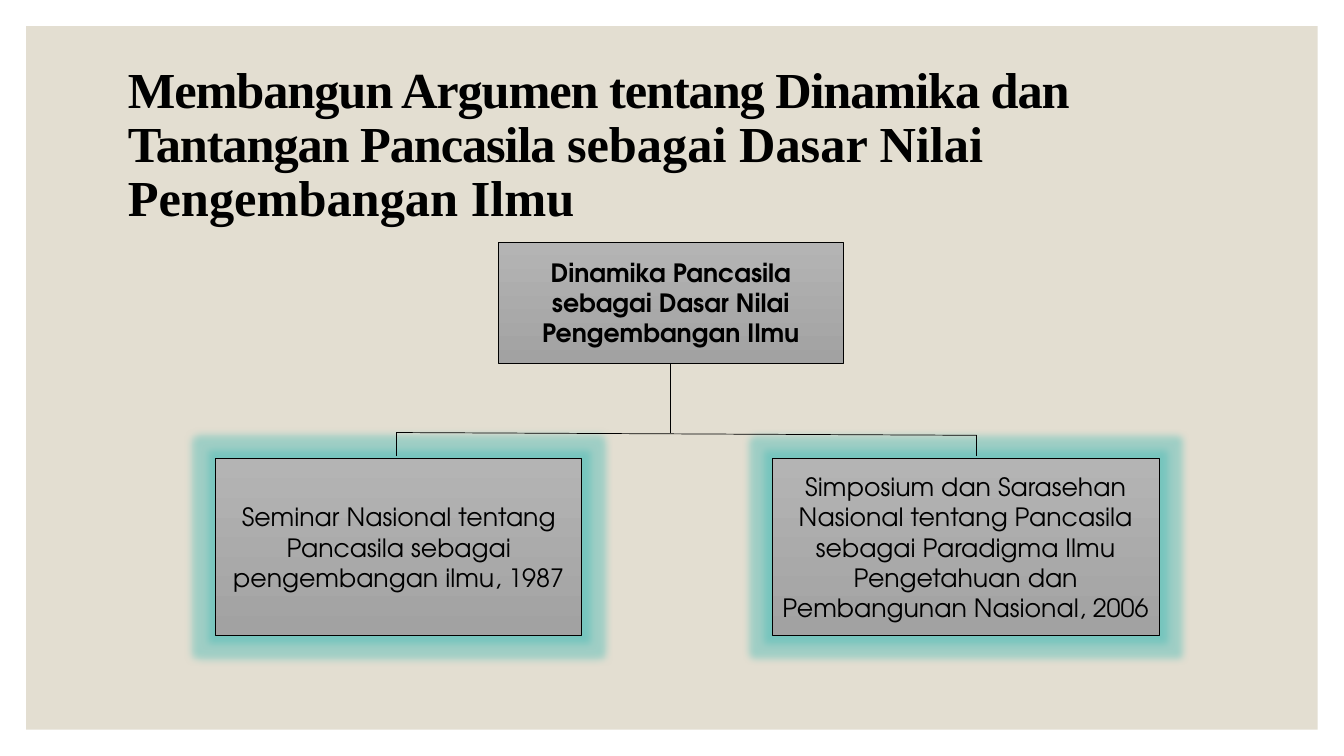
from dataclasses import dataclass

from lxml import etree
from pptx import Presentation
from pptx.dml.color import RGBColor
from pptx.enum.shapes import MSO_CONNECTOR as Connector, MSO_SHAPE as Shape
from pptx.enum.text import MSO_ANCHOR as Anchor, PP_ALIGN as Align
from pptx.oxml.ns import qn
from pptx.util import Cm, Pt


@dataclass(frozen=True)
class Theme:
    panel: RGBColor = RGBColor.from_string("E3DED1")
    ink: RGBColor = RGBColor.from_string("000000")
    box_top: RGBColor = RGBColor.from_string("B4B4B4")
    box_bottom: RGBColor = RGBColor.from_string("A2A2A2")
    glow: str = "3AB8B3"
    title_font: str = "Times New Roman"
    body_font: str = "TeX Gyre Adventor"
    title_size: Pt = Pt(36)
    body_size: Pt = Pt(18)
    line_width: Pt = Pt(0.5)


THEME = Theme()
TITLE_FORMAT = {"name": THEME.title_font, "size": THEME.title_size, "bold": True}
BODY_FORMAT = {"name": THEME.body_font, "size": THEME.body_size}


def format_font(font, values):
    for name, value in values.items():
        setattr(font, name, value)
    font.color.rgb = THEME.ink


def add_panel(slide, margin, width, height):
    """Background panel, placed behind the title."""
    panel = slide.shapes.add_shape(
        Shape.RECTANGLE, Cm(margin), Cm(margin), Cm(width - 2 * margin), Cm(height - 2 * margin))
    panel.shadow.inherit = False
    panel.fill.solid()
    panel.fill.fore_color.rgb = THEME.panel
    panel.line.fill.background()
    slide.shapes.title.element.addprevious(panel.element)


def add_title(slide, left, top, width, height):
    title = slide.shapes.title
    place = {"left": Cm(left), "top": Cm(top), "width": Cm(width), "height": Cm(height)}
    for name, value in place.items():
        setattr(title, name, value)
    frame = title.text_frame
    frame.word_wrap = True
    frame.vertical_anchor = Anchor.MIDDLE
    paragraph = frame.paragraphs[0]
    paragraph.alignment = Align.LEFT
    paragraph.line_spacing = 0.9
    # Letter spacing in hundredths of a point
    parts = (("Membangun Argumen tentang Dinamika dan Tantangan Pancasila ", -80),
             ("sebagai Dasar Nilai Pengembangan Ilmu", 0))
    for text, spacing in parts:
        run = paragraph.add_run()
        run.text = text
        format_font(run.font, TITLE_FORMAT)
        run.font._element.set("spc", str(spacing))


def add_glow(shape):
    effects = shape._element.spPr.find(qn("a:effectLst"))
    glow = etree.SubElement(effects, qn("a:glow"), rad=str(Pt(11)))
    color = etree.SubElement(glow, qn("a:srgbClr"), val=THEME.glow)
    etree.SubElement(color, qn("a:alpha"), val="40000")


def add_box(slide, text, left, top, width, height, bold=False, glow=False):
    box = slide.shapes.add_shape(Shape.RECTANGLE, Cm(left), Cm(top), Cm(width), Cm(height))
    box.shadow.inherit = False
    box.fill.gradient()
    box.fill.gradient_angle = 270
    for stop, color in zip(box.fill.gradient_stops, (THEME.box_top, THEME.box_bottom)):
        stop.color.rgb = color
    box.line.color.rgb = THEME.ink
    box.line.width = THEME.line_width
    if glow:
        add_glow(box)
    frame = box.text_frame
    frame.word_wrap = True
    frame.vertical_anchor = Anchor.MIDDLE
    paragraph = frame.paragraphs[0]
    paragraph.alignment = Align.CENTER
    run = paragraph.add_run()
    run.text = text
    format_font(run.font, {**BODY_FORMAT, "bold": bold})
    return box


def add_line(slide, start, end):
    line = slide.shapes.add_connector(Connector.STRAIGHT, *map(Cm, start + end))
    line.line.color.rgb = THEME.ink
    line.line.width = THEME.line_width
    etree.SubElement(line._element.spPr, qn("a:effectLst"))
    return line


def add_tree(slide, left, top, width):
    """Root box with two events below, placed from the top left corner."""
    root_left, root_width, root_height = left + 7.11, 8.71, 3.05
    root = add_box(slide, "Dinamika Pancasila sebagai Dasar Nilai Pengembangan Ilmu",
                   root_left, top, root_width, root_height, bold=True)

    # Events
    event_top, event_height = top + 5.46, 4.45
    events = (("Seminar Nasional tentang Pancasila sebagai pengembangan ilmu, 1987",
               left, 9.22),
              ("Simposium dan Sarasehan Nasional tentang Pancasila sebagai "
               "Paradigma Ilmu Pengetahuan dan Pembangunan Nasional, 2006",
               left + width - 9.75, 9.75))
    for text, event_left, event_width in events:
        add_box(slide, text, event_left, event_top, event_width, event_height, glow=True)

    # Stem, slightly sloping bar and drops
    middle = root_left + root_width / 2
    bar_start, bar_end = (left + 4.54, top + 4.8), (left + 19.17, top + 4.87)
    stem = add_line(slide, (middle, top + root_height), (middle, bar_start[1]))
    stem.begin_connect(root, 2)
    add_line(slide, bar_start, bar_end)
    for corner in (bar_start, bar_end):
        add_line(slide, corner, (corner[0], event_top - 0.08))


def main():
    width, height = 33.87, 19.05
    presentation = Presentation()
    presentation.slide_width, presentation.slide_height = Cm(width), Cm(height)
    slide = presentation.slides.add_slide(presentation.slide_layouts.get_by_name("Title Only"))
    add_panel(slide, 0.66, width, height)
    add_title(slide, 2.97, 1.78, 27.94, 3.81)
    add_tree(slide, 5.44, 6.1, 23.77)
    presentation.save("out.pptx")


if __name__ == "__main__":
    main()
